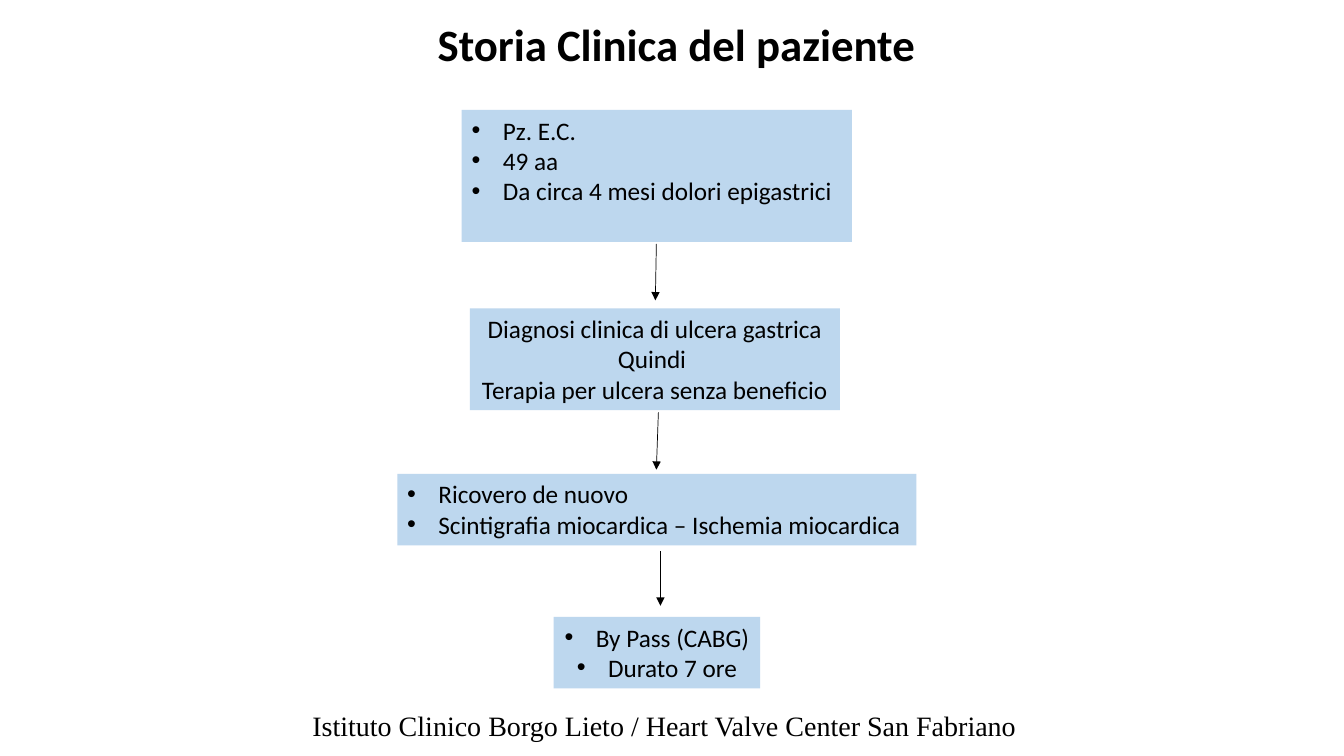
from dataclasses import dataclass

from lxml.etree import SubElement
from pptx import Presentation
from pptx.dml.color import RGBColor
from pptx.enum.shapes import MSO_CONNECTOR, MSO_SHAPE
from pptx.enum.text import MSO_ANCHOR, MSO_AUTO_SIZE, PP_ALIGN
from pptx.oxml.ns import qn
from pptx.util import Inches, Pt


@dataclass(frozen=True)
class Theme:
    ink: RGBColor = RGBColor(0x00, 0x00, 0x00)
    box: RGBColor = RGBColor(0xBD, 0xD7, 0xEE)
    font: str = "Calibri"
    footer_font: str = "Times New Roman"
    title_size: int = 32
    step_size: int = 18
    footer_size: int = 20
    arrow_width: float = 0.5
    indent: float = 0.31


THEME = Theme()
LEFT, CENTER = PP_ALIGN.LEFT, PP_ALIGN.CENTER

TITLE = ("Storia Clinica del paziente", (4.24, 0.11, 4.99, 0.64))
FOOTER = ("Istituto Clinico Borgo Lieto / Heart Valve Center San Fabriano",
          (3, 6.98, 7.03, 0.44))

# Each step: left, top, width, height; alignment; bulleted; lines
STEPS = [
    ((4.58, 1.09, 3.87, 1.31), LEFT, True,
     ["Pz. E.C.", "49 aa", "Da circa 4 mesi dolori epigastrici"]),
    ((4.66, 3.06, 3.67, 1.01), CENTER, False,
     ["Diagnosi clinica di ulcera gastrica", "Quindi ",
      "Terapia per ulcera senza beneficio"]),
    ((3.94, 4.7, 5.15, 0.71), LEFT, True,
     ["Ricovero de nuovo", "Scintigrafia miocardica – Ischemia miocardica"]),
    ((5.49, 6.12, 2.05, 0.71), CENTER, True,
     ["By Pass (CABG)", "Durato 7 ore"]),
]

# Each arrow: start x, start y, end x, end y
ARROWS = [
    (6.51, 2.42, 6.5, 2.98),
    (6.53, 4.09, 6.51, 4.66),
    (6.55, 5.47, 6.55, 6.01),
]


def place(shape, box):
    shape.left, shape.top, shape.width, shape.height = map(Inches, box)


def add_bullet(paragraph):
    properties = paragraph._p.get_or_add_pPr()
    properties.set("marL", str(Inches(THEME.indent)))
    properties.set("indent", str(-Inches(THEME.indent)))
    SubElement(properties, qn("a:buFont")).set("typeface", "Arial")
    SubElement(properties, qn("a:buChar")).set("char", "•")


def write(shape, lines, size, font=THEME.font, bold=False,
          alignment=LEFT, bulleted=False, anchor=MSO_ANCHOR.TOP, wrap=False):
    frame = shape.text_frame
    frame.auto_size = MSO_AUTO_SIZE.NONE
    frame.word_wrap = wrap
    frame.vertical_anchor = anchor
    for index, line in enumerate(lines):
        paragraph = frame.add_paragraph() if index else frame.paragraphs[0]
        paragraph.alignment = alignment
        if bulleted:
            add_bullet(paragraph)
        run = paragraph.add_run()
        run.text = line
        run.font.name = font
        run.font.size = Pt(size)
        run.font.bold = bold
        run.font.color.rgb = THEME.ink


def add_step(slide, box, alignment, bulleted, lines):
    shape = slide.shapes.add_shape(MSO_SHAPE.RECTANGLE, *map(Inches, box))
    shape.shadow.inherit = False
    shape.fill.solid()
    shape.fill.fore_color.rgb = THEME.box
    shape.line.fill.background()
    write(shape, lines, THEME.step_size, alignment=alignment,
          bulleted=bulleted, wrap=alignment == LEFT)


def add_arrow(slide, ends):
    arrow = slide.shapes.add_connector(MSO_CONNECTOR.STRAIGHT,
                                       *map(Inches, ends))
    arrow.line.color.rgb = THEME.ink
    arrow.line.width = Pt(THEME.arrow_width)
    SubElement(arrow.line._get_or_add_ln(), qn("a:tailEnd")).set(
        "type", "triangle")
    SubElement(arrow._element.spPr, qn("a:effectLst"))


def main():
    presentation = Presentation()
    presentation.slide_width = Inches(13.33)
    presentation.slide_height = Inches(7.5)
    slide = presentation.slides.add_slide(presentation.slide_layouts[5])

    title_text, title_box = TITLE
    title = slide.shapes.title
    place(title, title_box)
    write(title, [title_text], THEME.title_size, bold=True,
          anchor=MSO_ANCHOR.MIDDLE)

    for step in STEPS:
        add_step(slide, *step)
    for ends in ARROWS:
        add_arrow(slide, ends)

    footer_text, footer_box = FOOTER
    footer = slide.shapes.add_textbox(*map(Inches, footer_box))
    write(footer, [footer_text], THEME.footer_size, font=THEME.footer_font)

    presentation.save("out.pptx")


if __name__ == "__main__":
    main()
